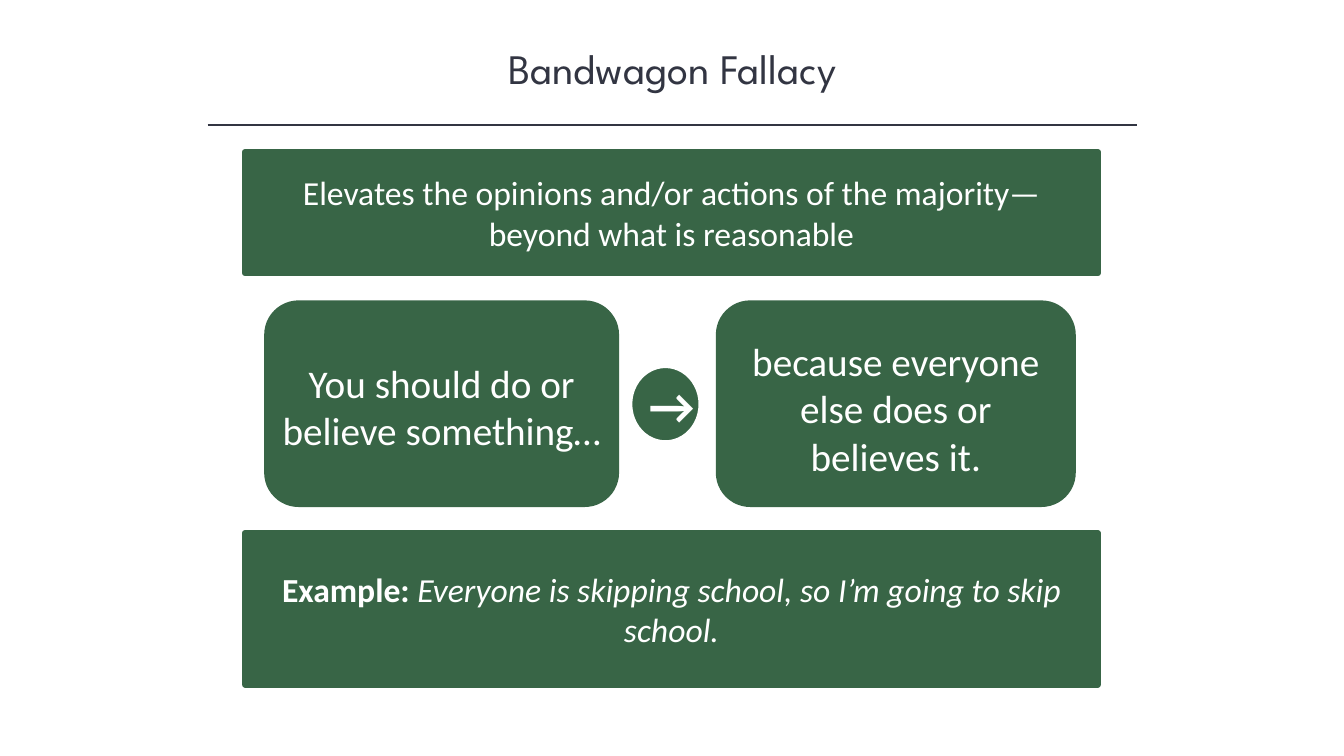
from pptx import Presentation
from pptx.dml.color import RGBColor
from pptx.enum.shapes import MSO_CONNECTOR, MSO_SHAPE
from pptx.enum.text import MSO_ANCHOR, PP_ALIGN
from pptx.util import Inches, Pt
from lxml import etree

RECT, ROUND, OVAL = MSO_SHAPE.RECTANGLE, MSO_SHAPE.ROUNDED_RECTANGLE, MSO_SHAPE.OVAL
STRAIGHT = MSO_CONNECTOR.STRAIGHT
CENTER, MIDDLE, TOP = PP_ALIGN.CENTER, MSO_ANCHOR.MIDDLE, MSO_ANCHOR.TOP
COLORS = {"ink": "323542", "green": "386546", "white": "FFFFFF"}
A = "http://schemas.openxmlformats.org/drawingml/2006/main"


def rgb(name):
    return RGBColor.from_string(COLORS[name])


def write(tf, runs, size, font, color, anchor, insets):
    tf.word_wrap = True
    tf.vertical_anchor = anchor
    for side, inset in zip(("left", "top", "right", "bottom"), insets):
        setattr(tf, f"margin_{side}", Inches(inset))
    p = tf.paragraphs[0]
    p.alignment = CENTER
    for text, style in runs:
        r = p.add_run()
        r.text = text
        r.font.color.rgb = rgb(color)
        for key, value in {"name": font, "size": Pt(size), **style}.items():
            setattr(r.font, key, value)


prs = Presentation()
prs.slide_width, prs.slide_height = Inches(13.33), Inches(7.5)
s = prs.slides.add_slide(prs.slide_layouts[6])

PAD = (0.1, 0.05, 0.1, 0.05)
title = s.shapes.add_textbox(Inches(1.67), Inches(0.37), Inches(10), Inches(0.61))
write(title.text_frame, [("Bandwagon Fallacy", {})], 30, "League Spartan", "ink", TOP, PAD)

rule = s.shapes.add_connector(STRAIGHT, Inches(2.06), Inches(1.24), Inches(11.28), Inches(1.24))
rule.line.color.rgb = rgb("ink")
rule.line.width = Pt(1)
etree.SubElement(rule._element.spPr, f"{{{A}}}effectLst")

BAND_X, BAND_W = 2.43, 8.46
CARD_Y, CARD_H = 2.98, 2.05
blocks = [
    (RECT, (BAND_X, 1.51, BAND_W, 1.2), ("green", 4.5), 24, (0.5, 0.05, 0.5, 0.05),
     [("Elevates the opinions and/or actions of the majority—beyond what is reasonable", {})]),
    (ROUND, (2.62, CARD_Y, 3.52, CARD_H), None, 28, (0.05, 0.1, 0.05, 0.05),
     [("You should do or believe something…", {})]),
    (ROUND, (7.1, CARD_Y, 3.57, CARD_H), None, 28, (0.2, 0.14, 0.2, 0.05),
     [("because everyone else does or believes it.", {})]),
    (RECT, (BAND_X, 5.29, BAND_W, 1.5), ("green", 4.5), 24, PAD,
     [("Example: ", {"bold": True}),
      ("Everyone is skipping school, so I’m going to skip school.", {"italic": True})]),
    (OVAL, (6.23, 3.61, 0.74, 0.8), ("white", 6), 36, PAD, [("→", {"bold": True})]),
]
for kind, box, outline, size, insets, runs in blocks:
    sp = s.shapes.add_shape(kind, *(Inches(v) for v in box))
    sp.shadow.inherit = False
    sp.fill.solid()
    sp.fill.fore_color.rgb = rgb("green")
    if outline:
        sp.line.color.rgb = rgb(outline[0])
        sp.line.width = Pt(outline[1])
    else:
        sp.line.fill.background()
    write(sp.text_frame, runs, size, "Calibri", "white", MIDDLE, insets)

prs.save("out.pptx")
